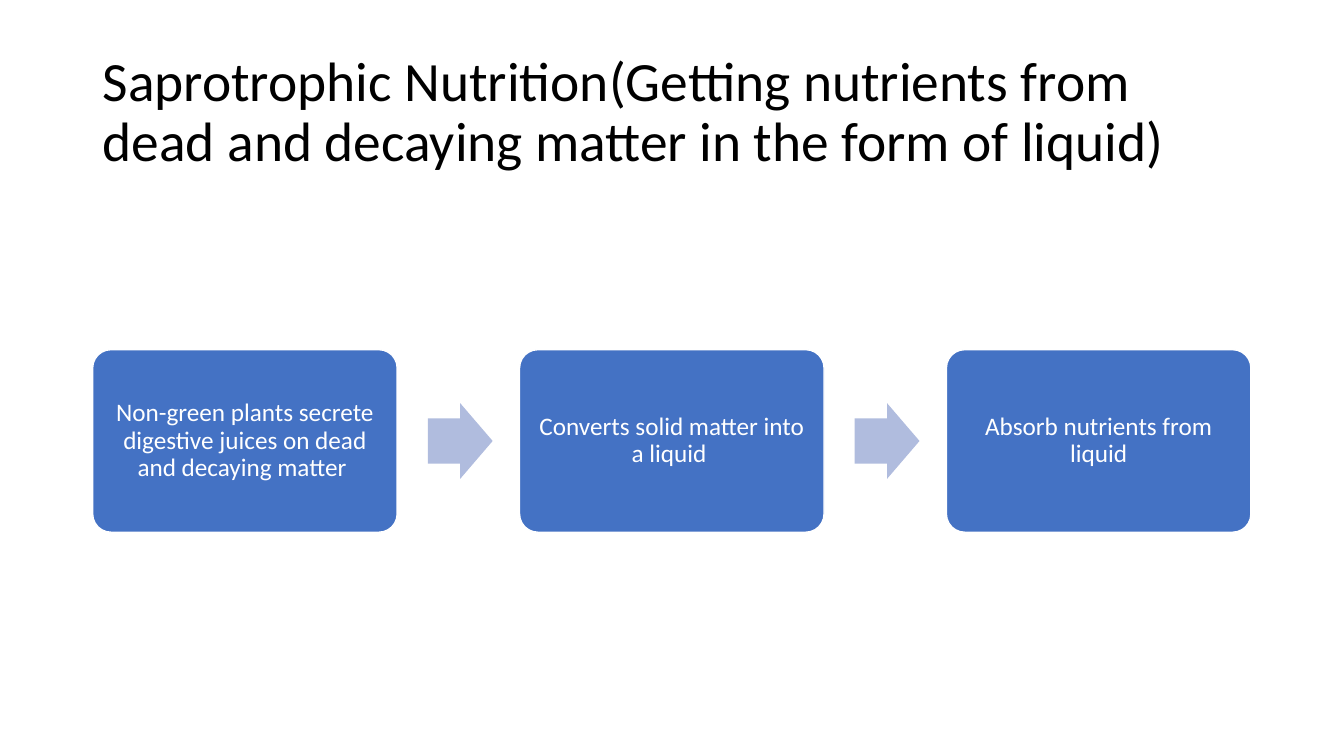
from pptx import Presentation
from pptx.dml.color import RGBColor
from pptx.enum.shapes import MSO_SHAPE as Preset
from pptx.enum.text import MSO_ANCHOR as Anchor, MSO_AUTO_SIZE as AutoSize, PP_ALIGN as Align
from pptx.util import Pt

FONT = "Calibri"
TITLE = (
    "Saprotrophic Nutrition(Getting nutrients from dead and decaying matter "
    "in the form of liquid)"
)
STEPS = [
    "Non-green plants secrete digestive juices on dead and decaying matter ",
    "Converts solid matter into a liquid ",
    "Absorb nutrients from liquid",
]
LEFT, MIDDLE, PITCH = 66.2, 315, 304.9
BOX_WIDTH, BOX_HEIGHT = 217.5, 130.4
ARROW_OFFSET, ARROW_WIDTH, ARROW_HEIGHT = 239.4, 46.3, 54


def color(value):
    return RGBColor.from_string(value)


def write(shape, text, size, text_color, align):
    frame = shape.text_frame
    frame.word_wrap = True
    frame.auto_size = AutoSize.NONE
    frame.vertical_anchor = Anchor.MIDDLE
    paragraph = frame.paragraphs[0]
    paragraph.alignment = align
    paragraph.line_spacing = 0.9
    run = paragraph.add_run()
    run.text = text
    run.font.name = FONT
    run.font.size = Pt(size)
    run.font.color.rgb = color(text_color)


def add_title(slide):
    title = slide.shapes.title
    title.left, title.top = Pt(LEFT), Pt(28.75)
    title.width, title.height = Pt(828), Pt(104.4)
    write(title, TITLE, 39.6, "000000", Align.LEFT)


def add_preset(slide, preset, left, width, height, fill, adjustments):
    shape = slide.shapes.add_shape(
        preset, Pt(left), Pt(MIDDLE - height / 2), Pt(width), Pt(height)
    )
    shape.shadow.inherit = False
    shape.fill.solid()
    shape.fill.fore_color.rgb = color(fill)
    shape.line.fill.background()
    for index, value in enumerate(adjustments):
        shape.adjustments[index] = value
    return shape


def add_step(slide, left, text):
    box = add_preset(
        slide, Preset.ROUNDED_RECTANGLE, left, BOX_WIDTH, BOX_HEIGHT, "4472C4", [0.1]
    )
    box.line.color.rgb = color("FFFFFF")
    box.line.width = Pt(1)
    frame = box.text_frame
    frame.margin_left = frame.margin_right = Pt(5)
    frame.margin_top = frame.margin_bottom = Pt(5)
    write(box, text, 18, "FFFFFF", Align.CENTER)


def add_arrow(slide, left):
    add_preset(
        slide, Preset.RIGHT_ARROW, left, ARROW_WIDTH, ARROW_HEIGHT, "B0BCDE", [0.6, 0.5]
    )


def main():
    presentation = Presentation()
    presentation.slide_width, presentation.slide_height = Pt(960), Pt(540)
    slide = presentation.slides.add_slide(presentation.slide_layouts.get_by_name("Title Only"))
    add_title(slide)
    for index, text in enumerate(STEPS):
        left = LEFT + index * PITCH
        add_step(slide, left, text)
        if index < len(STEPS) - 1:
            add_arrow(slide, left + ARROW_OFFSET)
    presentation.save("out.pptx")


if __name__ == "__main__":
    main()
